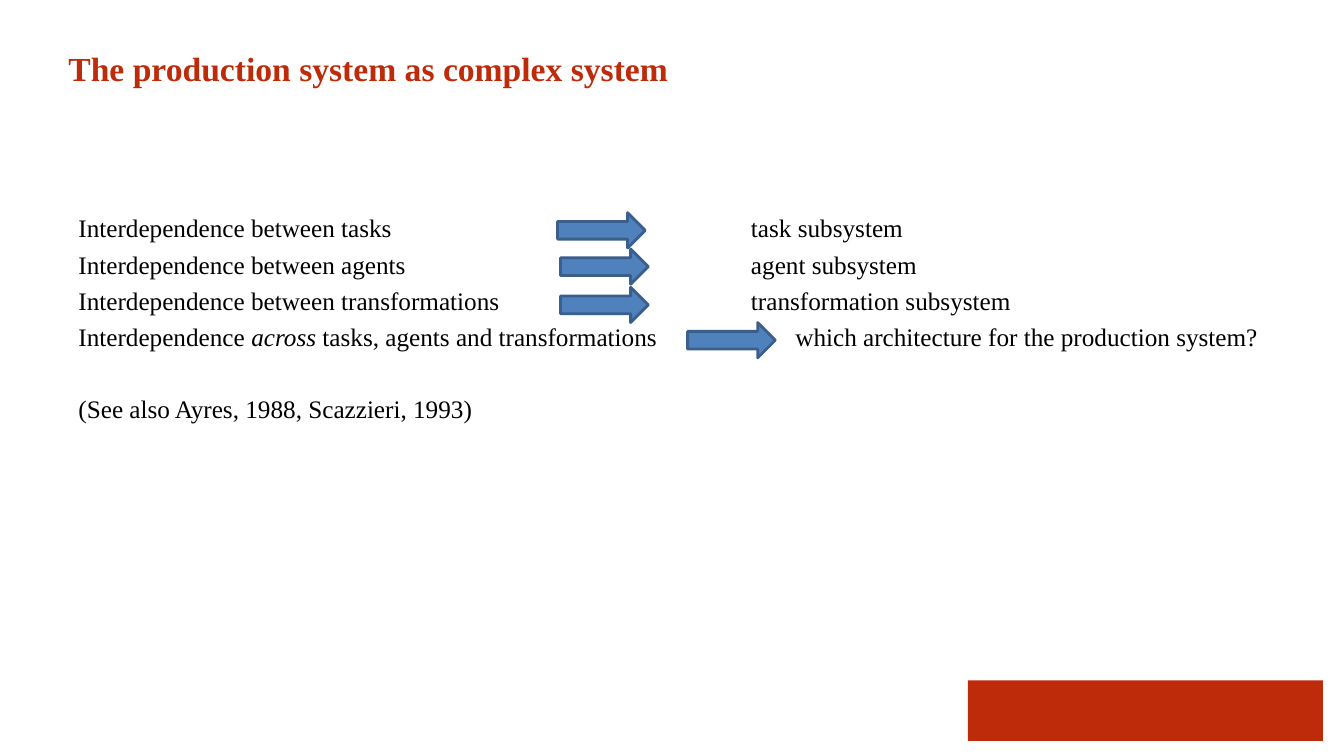
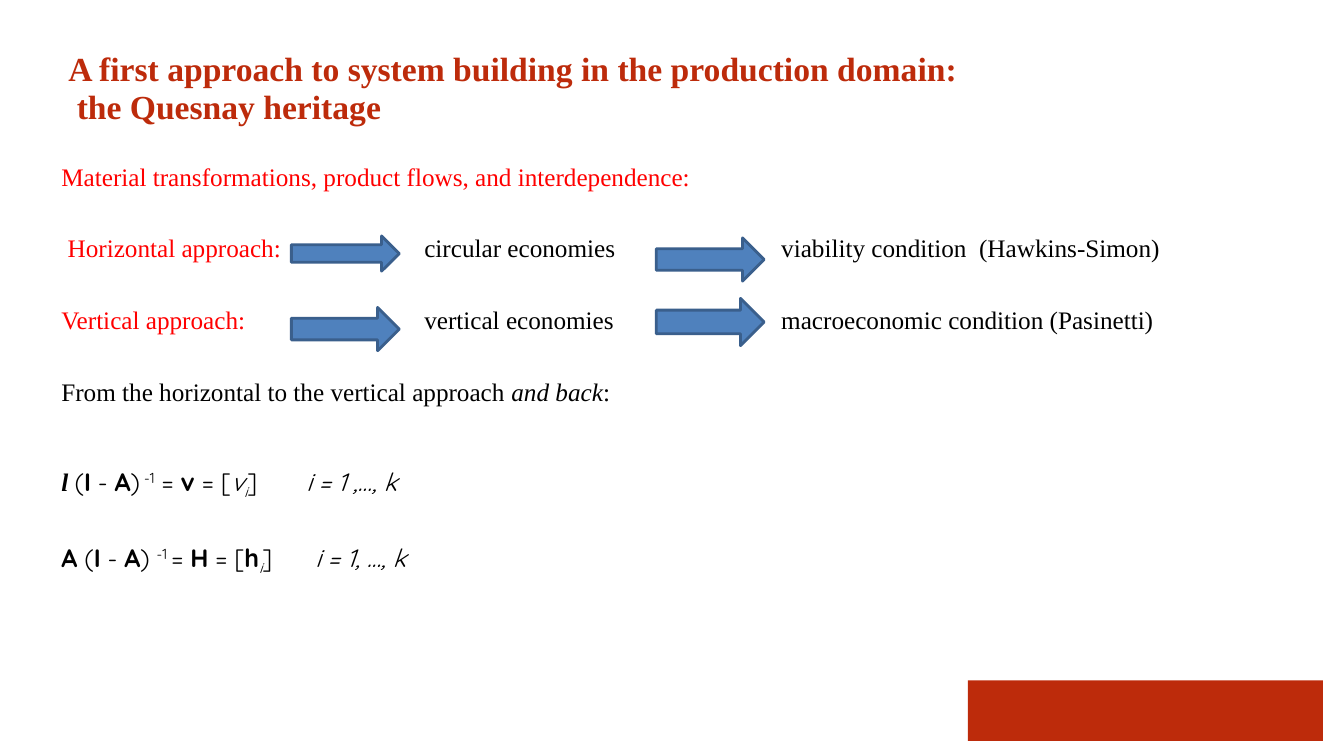
import pptx
import pptx.dml.color
import pptx.enum.shapes
import pptx.oxml.ns
import pptx.util
from lxml import etree
from pptx.util import Inches

COLORS = {"brand": "BD2B0B", "text": "000000", "accent": "FF0000",
          "arrow": "4F81BD", "arrow_line": "3A5F8C"}
SERIF, FORMULA = "Times New Roman", "Quicksand"
BASELINES = {"^": "30000", "_": "-25000"}
CLOSE, WIDE, FORMULA_GAP = 4.4, 29.5, 43
BODY_WIDTH = 12.28


def rgb(name):
    return pptx.dml.color.RGBColor.from_string(COLORS[name])


def add_text(slide, box):
    shape = slide.shapes.add_textbox(*map(Inches, box))
    shape.text_frame.word_wrap = True
    return shape.text_frame


def next_paragraph(text_frame, index):
    return text_frame.paragraphs[0] if index == 0 else text_frame.add_paragraph()


def format_run(run, size, color, flags="", font=SERIF):
    run.font.name = font
    run.font.size = pptx.util.Pt(size)
    run.font.color.rgb = rgb(color)
    run.font.bold = "b" in flags
    run.font.italic = "i" in flags
    for flag, offset in BASELINES.items():
        if flag in flags:
            run.font._element.set("baseline", offset)


def set_tabs(paragraph, stops):
    tab_list = etree.SubElement(paragraph._p.get_or_add_pPr(), pptx.oxml.ns.qn("a:tabLst"))
    for stop in stops:
        etree.SubElement(tab_list, pptx.oxml.ns.qn("a:tab"), pos=str(Inches(stop)), algn="l")


def add_title(slide, lines, box=(0.58, 0.52, BODY_WIDTH, 0.71)):
    text_frame = add_text(slide, box)
    for index, line in enumerate(lines):
        paragraph = next_paragraph(text_frame, index)
        paragraph.text = line
        paragraph.line_spacing = pptx.util.Pt(22)
        if index:
            paragraph.space_before = pptx.util.Pt(5)
        format_run(paragraph.runs[0], 24, "brand", "b")


def add_body(slide, box, rows):
    """Each row is (space before, tab stops, runs); a run is (text, flags)."""
    text_frame = add_text(slide, box)
    for index, (space, stops, runs) in enumerate(rows):
        paragraph = next_paragraph(text_frame, index)
        if index:
            paragraph.space_before = pptx.util.Pt(space)
        if stops:
            set_tabs(paragraph, stops)
        for text, flags in runs:
            run = paragraph.add_run()
            run.text = text
            format_run(run, 18, "accent" if "r" in flags else "text", flags,
                       FORMULA if "q" in flags else SERIF)


def add_block(slide, kind, box, fill):
    shape = slide.shapes.add_shape(kind, *map(Inches, box))
    shape.shadow.inherit = False
    shape.fill.solid()
    shape.fill.fore_color.rgb = rgb(fill)
    shape.line.fill.background()
    return shape


def add_arrows(slide, boxes):
    for box in boxes:
        arrow = add_block(slide, pptx.enum.shapes.MSO_SHAPE.RIGHT_ARROW, box, "arrow")
        arrow.line.color.rgb = rgb("arrow_line")
        arrow.line.width = pptx.util.Pt(2)


def add_slide(presentation, title_lines, body_box, rows, arrows):
    slide = presentation.slides.add_slide(presentation.slide_layouts[6])
    add_block(slide, pptx.enum.shapes.MSO_SHAPE.RECTANGLE, (9.6, 6.75, 3.52, 0.6), "brand")
    add_title(slide, title_lines)
    add_body(slide, body_box, rows)
    add_arrows(slide, arrows)


def add_complex_system(presentation):
    subsystems = [("tasks", "task"), ("agents", "agent"), ("transformations", "transformation")]
    rows = [(CLOSE, [6.67], [(f"Interdependence between {parts}\t{name} subsystem", "")])
            for parts, name in subsystems]
    rows += [
        (CLOSE, [7.11], [("Interdependence ", ""), ("across ", "i"),
                         ("tasks, agents and transformations"
                          "\twhich architecture for the production system?", "")]),
        (WIDE, [], [("(See also Ayres, 1988, Scazzieri, 1993)", "")]),
    ]
    arrows = [(left, top, 0.87, 0.35) for left, top in
              [(5.53, 2.11), (5.56, 2.47), (5.56, 2.85), (6.82, 3.2)]]
    add_slide(presentation, ["The production system as complex system"],
              (0.68, 2.06, BODY_WIDTH, 4.68), rows, arrows)


def add_system_building(presentation):
    columns = [3.6, 7.14]
    rows = [
        (0, [], [("Material transformations, product flows, and interdependence:", "r")]),
        (WIDE, columns, [(" Horizontal approach:", "r"),
                         ("\tcircular economies\tviability condition  (Hawkins-Simon)", "")]),
        (WIDE, columns, [("Vertical approach:", "r"),
                         ("\tvertical economies\tmacroeconomic condition (Pasinetti)", "")]),
        (WIDE, [], [("From the horizontal to the vertical approach ", ""),
                    ("and back", "i"), (":", "")]),
        (FORMULA_GAP, [2.43], [
            ("l ", "bi"), ("(", "q"), ("I", "qb"), (" - ", "q"), ("A", "qb"), (")", "q"),
            (" -1", "q^"), (" =", "q"), (" v", "qb"), (" = [", "q"), ("v", "qi"),
            ("i", "qi_"), ("]\t", "q"), ("i = 1 ,…, k", "qi")]),
        (WIDE, [2.52], [
            ("A", "qb"), (" (", "q"), ("I", "qb"), (" - ", "q"), ("A", "qb"), (") ", "q"),
            ("-1 ", "q^"), ("= ", "q"), ("H", "qb"), (" = [", "q"), ("h", "qb"),
            ("i", "qi_"), ("]\t", "q"), ("i = 1, …, k", "qi")]),
    ]
    arrows = [(left, top, 1.07, height) for left, top, height in
              [(2.89, 2.34, 0.35), (6.51, 2.36, 0.43), (2.89, 3.05, 0.43), (6.51, 2.96, 0.47)]]
    add_slide(presentation, ["A first approach to system building in the production domain:",
                             " the Quesnay heritage"],
              (0.51, 1.55, BODY_WIDTH, 5.04), rows, arrows)


def main():
    presentation = pptx.Presentation()
    presentation.slide_width = Inches(13.33)
    presentation.slide_height = Inches(7.5)
    add_complex_system(presentation)
    add_system_building(presentation)
    presentation.save("out.pptx")


if __name__ == "__main__":
    main()
